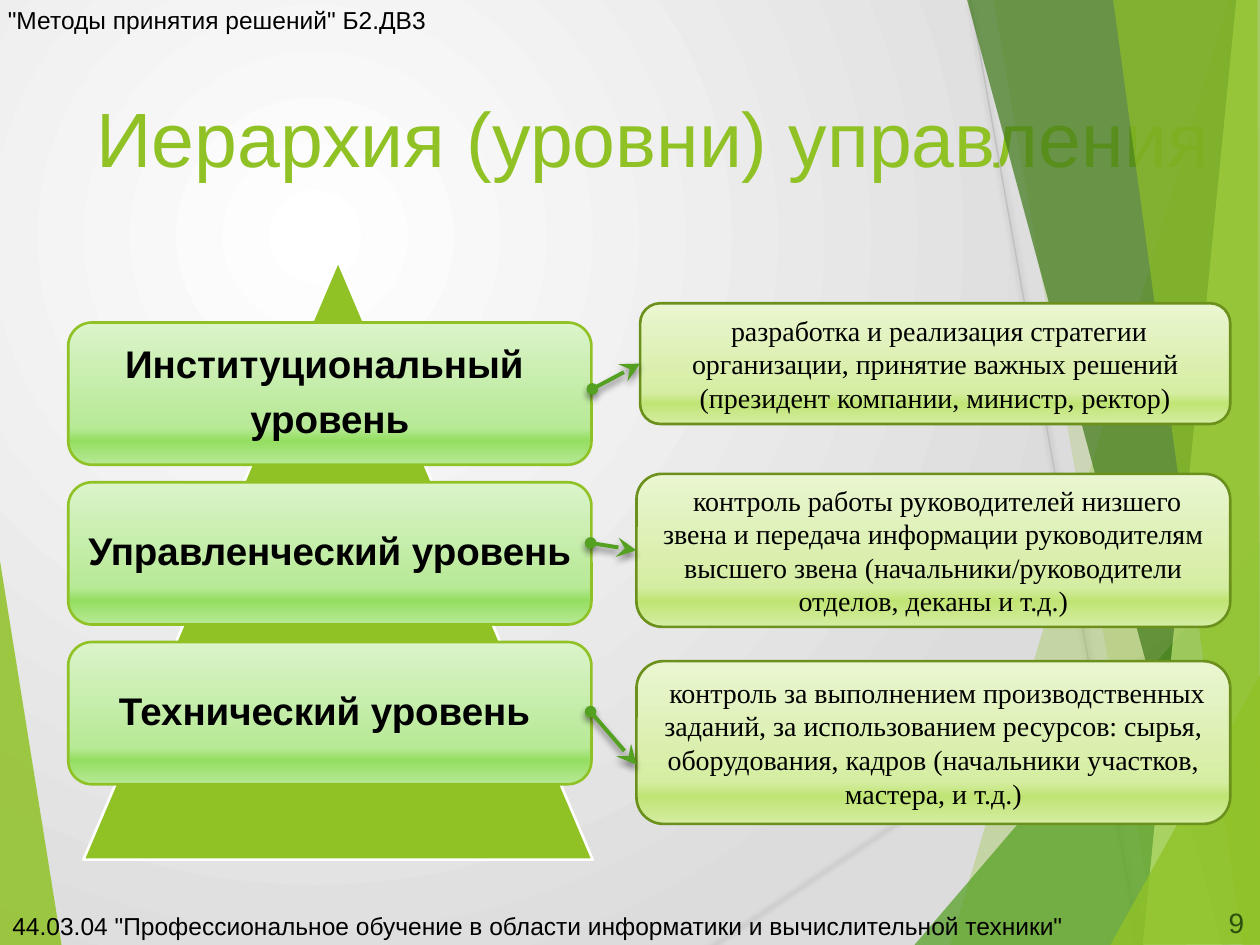
from lxml import etree
from pptx import Presentation
from pptx import util as u
from pptx.dml.color import RGBColor
from pptx.enum import shapes, text
from pptx.oxml import ns

LEFT, MID, RIGHT = text.PP_ALIGN.LEFT, text.PP_ALIGN.CENTER, text.PP_ALIGN.RIGHT
TOP, HALF = text.MSO_ANCHOR.TOP, text.MSO_ANCHOR.MIDDLE


def rgb(code):
    return RGBColor.from_string(code)


def sub(node, tag, **attrs):
    return etree.SubElement(node, ns.qn("a:" + tag), {k: str(v) for k, v in attrs.items()})


def blend(owner, stops, circle=False):
    """Replace the solid fill inside owner by a gradient."""
    old = owner.find(ns.qn("a:solidFill"))
    grad = etree.Element(ns.qn("a:gradFill"), rotWithShape="1")
    rows = sub(grad, "gsLst")
    for pos, code in stops:
        sub(sub(rows, "gs", pos=pos * 1000), "srgbClr", val=code)
    if circle:
        way = sub(grad, "path", path="circle")
        sub(way, "fillToRect", l=50000, t=50000, r=100000, b=100000)
    else:
        sub(grad, "lin", ang=5400000, scaled=0)
    owner.replace(old, grad)


def shade(line, alpha, blur, dist):
    """Give a connector a soft shadow that falls straight down."""
    fx = sub(line._element.spPr, "effectLst")
    drop = sub(fx, "outerShdw", blurRad=u.Pt(blur), dist=u.Pt(dist), dir=5400000, rotWithShape=0)
    sub(sub(drop, "srgbClr", val="000000"), "alpha", val=alpha * 1000)


def write(frame, words, size=14, font="Arial", color="000000", bold=False, align=LEFT,
          anchor=HALF, pad=(7.2, 3.6), space=None, after=0, indent=None):
    frame.word_wrap = True
    frame.auto_size = text.MSO_AUTO_SIZE.NONE
    frame.vertical_anchor = anchor
    frame.margin_left = frame.margin_right = u.Pt(pad[0])
    frame.margin_top = frame.margin_bottom = u.Pt(pad[1])
    for i, part in enumerate(words.split("\n")):
        para = frame.add_paragraph() if i else frame.paragraphs[0]
        para.alignment = align
        para.space_after = u.Pt(after)
        if space:
            para.line_spacing = space
        if indent:
            para._p.get_or_add_pPr().set("indent", str(u.Pt(indent)))
        run = para.add_run()
        run.text = part
        run.font.size, run.font.name, run.font.bold = u.Pt(size), font, bold
        run.font.color.rgb = rgb(color)


class Deck:
    green, leaf, dark = "90C226", "54A021", "6B901C"
    mint = [(0, "DBF4CA"), (74, "B7E996"), (83, "94DE61"), (100, "B7E996")]
    lime = [(0, "EAF6D1"), (74, "D5EDA2"), (83, "C0E474"), (100, "D5EDA2")]

    def __init__(self):
        self.prs = Presentation()
        self.prs.slide_width, self.prs.slide_height = u.Pt(720), u.Pt(540)
        self.slide = self.prs.slides.add_slide(self.prs.slide_layouts[5])
        self.items = self.slide.shapes

    def ground(self, stops):
        self.slide.background.fill.solid()
        blend(self.slide._element.cSld.bg.bgPr, stops, circle=True)

    def title(self, words, x, y, w, h):
        box = self.items.title
        box.left, box.top, box.width, box.height = map(u.Pt, (x, y, w, h))
        write(box.text_frame, words, size=44, color=self.green, anchor=TOP)

    def facet(self, color, alpha, points):
        """Translucent polygon of the side decoration."""
        first, *rest = [(u.Pt(x), u.Pt(y)) for x, y in points]
        pen = self.items.build_freeform(*first)
        pen.add_line_segments(rest, close=True)
        form = pen.convert_to_shape()
        form.shadow.inherit = False
        form.fill.solid()
        form.fill.fore_color.rgb = rgb(color)
        tint = form._element.spPr.find(ns.qn("a:solidFill"))[0]
        sub(tint, "alpha", val=alpha * 1000)
        form.line.fill.background()

    def shape(self, kind, x, y, w, h, edge, fill=None, stops=None):
        form = self.items.add_shape(kind, *map(u.Pt, (x, y, w, h)))
        form.shadow.inherit = False
        form.fill.solid()
        form.fill.fore_color.rgb = rgb(fill or self.green)
        if stops:
            blend(form._element.spPr, stops)
        form.line.color.rgb = rgb(edge)
        form.line.width = u.Pt(1.5)
        return form

    def card(self, words, x, y, w, h, edge, stops, **style):
        form = self.shape(shapes.MSO_SHAPE.ROUNDED_RECTANGLE, x, y, w, h, edge, stops=stops)
        write(form.text_frame, words, align=MID, **style)
        return form

    def line(self, start, end, color, width):
        bar = self.items.add_connector(shapes.MSO_CONNECTOR.STRAIGHT, *map(u.Pt, start + end))
        bar.line.color.rgb = rgb(color)
        bar.line.width = u.Pt(width)
        return bar

    def arrow(self, start, end, goal=None):
        bar = self.line(start, end, self.leaf, 2.25)
        if goal:
            bar.end_connect(goal, 1)
        ln = bar.line._get_or_add_ln()
        sub(ln, "headEnd", type="oval")
        sub(ln, "tailEnd", type="stealth", w="lg", len="lg")
        shade(bar, 47, 4, 2.5)

    def label(self, words, x, y, w, h, **style):
        box = self.items.add_textbox(*map(u.Pt, (x, y, w, h)))
        write(box.text_frame, words, **style)


def main():
    deck = Deck()
    deck.ground([(0, "FFFFFF"), (100, "DCDCDC")])

    # Side decoration
    deck.facet(deck.green, 85, [(-0.7, 316), (35.3, 540.5), (-0.7, 540)])
    for start, end, color in [((404, 540), (720.5, 329), "D9D9D9"),
                              ((554.5, 0), (651, 540), "BFBFBF")]:
        shade(deck.line(start, end, color, 0.75), 28, 3, 2)
    for color, alpha, points in [
        (deck.green, 30, [(702, 0), (543, 540), (721, 540.5), (720.5, 0.5)]),
        (deck.green, 20, [(567.5, -0.5), (661.5, 540), (720.5, 540), (720.5, -0.5)]),
        (deck.leaf, 72, [(522.5, 540), (720, 309), (720.5, 540)]),
        ("3F7819", 70, [(552.5, -0.5), (698.5, 540), (720.5, 539.5), (720.5, -0.5)]),
        ("C0E474", 70, [(706.5, -0.5), (653, 540), (720.5, 540), (720, -0.5)]),
        (deck.green, 65, [(636, -0.5), (710, 540), (720, 540), (718.5, -0.5)]),
        (deck.green, 80, [(634.5, 540), (720.5, 385), (720.5, 539.5)]),
    ]:
        deck.facet(color, alpha, points)

    deck.title("Иерархия (уровни) управления", 48, 48, 660, 86)

    # Pyramid with its levels
    deck.shape(shapes.MSO_SHAPE.ISOSCELES_TRIANGLE, 47.7, 149.2, 291, 342, "FFFFFF")
    levels = ["Институциональный \nуровень", "Управленческий уровень", "Технический уровень "]
    for i, words in enumerate(levels):
        deck.card(words, 39, 184.3 + 91.3 * i, 299, 81.3, deck.green, deck.mint,
                  size=22, bold=True, pad=(6.5, 6.5), space=0.9, after=7.7)

    # Tasks of each level
    tasks = [
        ("разработка и реализация стратегии организации, принятие важных решений "
         "(президент компании, министр, ректор)", 365.8, 173.3, 69),
        ("контроль работы руководителей низшего звена и передача информации руководителям "
         "высшего звена (начальники/руководители отделов, деканы и т.д.)", 363.7, 270.8, 87.4),
        ("контроль за выполнением производственных заданий, за использованием ресурсов: сырья, "
         "оборудования, кадров (начальники участков, мастера, и т.д.)", 363.7, 377.8, 93),
    ]
    cards = [deck.card(words, x, y, 703 - x, h, deck.dark, deck.lime,
                       size=16, font="Times New Roman", indent=4.5)
             for words, x, y, h in tasks]

    # Arrows from levels to tasks
    deck.arrow((338.5, 222.3), (365.8, 207.8), cards[0])
    deck.arrow((337.5, 310.3), (363.7, 314.5), cards[1])
    deck.arrow((337.5, 406.7), (363.7, 437))

    # Header, footer and page number
    deck.label("9", 678, 516, 40, 22, size=16, color="2A5010", align=RIGHT)
    deck.label('"Методы принятия решений" Б2.ДВ3', -0.5, 0, 487.5, 22, pad=(5, 3))
    deck.label('44.03.04 "Профессиональное обучение в области информатики '
               'и вычислительной техники"', 0, 518.5, 678, 21.5)
    deck.prs.save("out.pptx")


if __name__ == "__main__":
    main()
